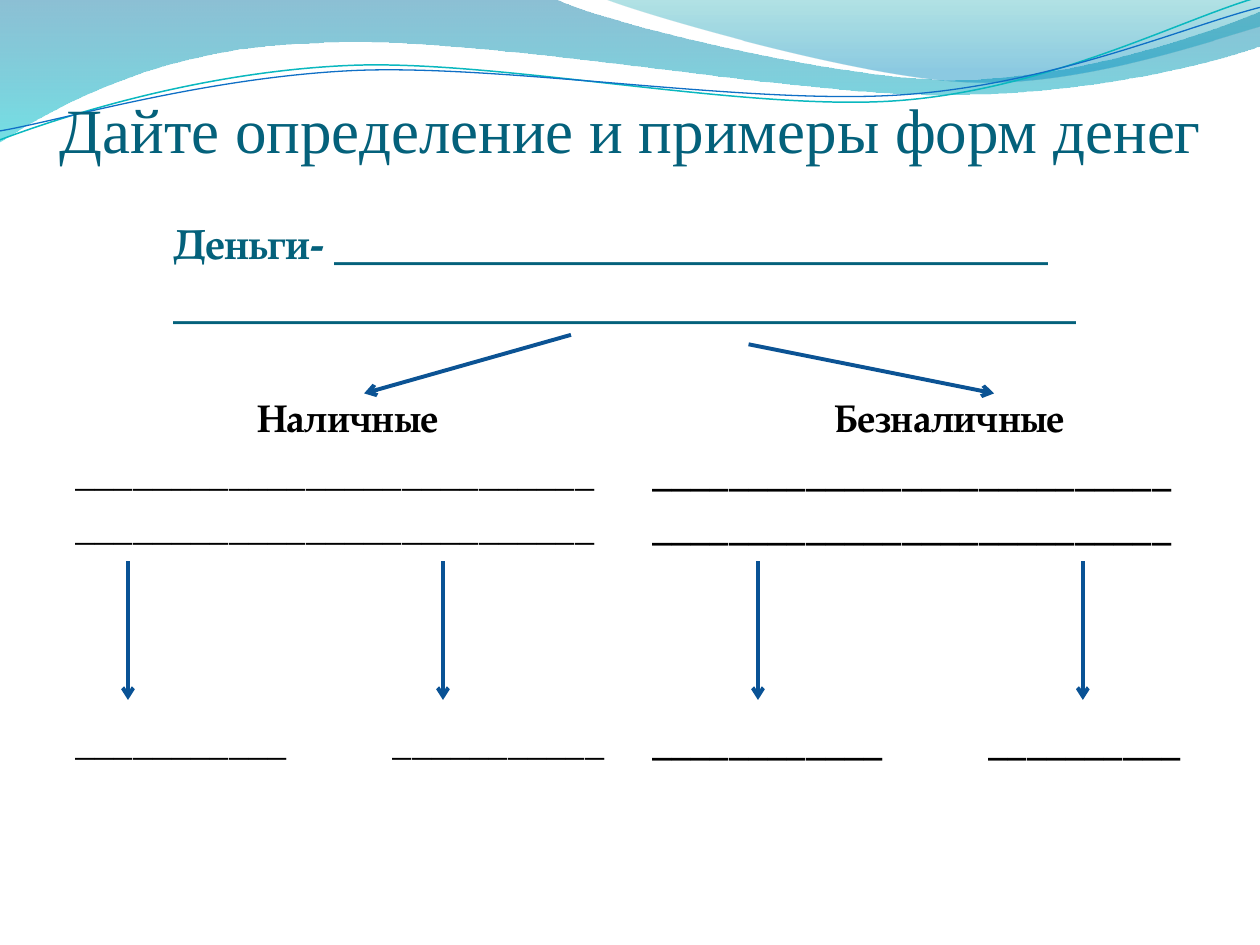
from lxml import etree
from pptx import Presentation
from pptx import util as u
from pptx.dml.color import RGBColor
from pptx.enum import shapes, text
from pptx.oxml.ns import qn

BLACK = RGBColor(0, 0, 0)
TEAL = RGBColor(0x04, 0x61, 0x7B)
BRANCH_BLUE = RGBColor(0x0B, 0x53, 0x94)
EXAMPLE_BLUE = RGBColor(0x09, 0x52, 0x95)
DEEP_BLUE = RGBColor(0, 0x74, 0xA1)
CYAN = RGBColor(0, 0xC6, 0xCF)
SEA_GREEN = RGBColor(0, 0xA1, 0xA9)
SKY_BLUE = RGBColor(0, 0x8B, 0xBF)
LINE_TEAL = RGBColor(0x0A, 0xB8, 0xBF)
LINE_BLUE = RGBColor(0x0F, 0x6F, 0xC6)
SERIF = "Times New Roman"
PAGELLA = "TeX Gyre Pagella"


def add_outline(page, left, top, start, segments, close):
    """Draw a freeform in centimetres; six numbers are a curve, two a line."""
    points = [start]
    for segment in segments:
        points.extend(zip(segment[::2], segment[1::2]))
    placed = [(u.Cm(left + x), u.Cm(top + y)) for x, y in points]
    builder = page.shapes.build_freeform(*placed[0])
    builder.add_line_segments(placed[1:], close=close)
    outline = builder.convert_to_shape()
    outline.shadow.inherit = False
    lines = iter(list(outline._element.iter(qn("a:lnTo"))))
    for segment in segments:
        first = next(lines)
        if len(segment) == 6:
            first.tag = qn("a:cubicBezTo")
            for _ in range(2):
                control = next(lines)
                first.append(control[0])
                control.getparent().remove(control)
    return outline


def add_wave(page, left, top, start, segments, stops):
    """Draw a filled wave; each stop is a position, a colour and an opacity."""
    wave = add_outline(page, left, top, start, segments, True)
    wave.line.fill.background()
    wave.fill.gradient()
    wave.fill.gradient_angle = 270
    for stop, (position, colour, _) in zip(wave.fill.gradient_stops, stops):
        stop.position = position
        stop.color.rgb = colour
    for tint, (_, _, opacity) in zip(wave._element.spPr.iter(qn("a:srgbClr")), stops):
        etree.SubElement(tint, qn("a:alpha")).set("val", str(opacity * 1000))


def add_ripple(page, left, top, start, segments, colour, width):
    """Draw a thin open curve."""
    ripple = add_outline(page, left, top, start, segments, False)
    ripple.fill.background()
    ripple.line.color.rgb = colour
    ripple.line.width = u.Pt(width)


def add_header_waves(page, left, top):
    """Draw the decoration along the top of the page."""
    add_wave(page, left, top, (0, 0), [
        (11.18, -0.03), (12.09, 0.43, 16.87, 1.6, 19.25, 1.6),
        (21.67, 1.6, 24.33, 0.66, 25.4, 0.23), (25.43, 0.91),
        (24.97, 1.12, 22.1, 1.93, 18.95, 1.91), (15.8, 1.91, 9.7, 0.71, 6.53, 0.86),
        (3.28, 0.91, 1.17, 2.11, -0.03, 2.87)], [(0, DEEP_BLUE, 45), (1, CYAN, 55)])
    add_wave(page, left, top, (12.17, -0.03), [
        (12.93, 0.28, 17.32, 1.57, 19.53, 1.65),
        (21.74, 1.75, 24.41, 0.81, 25.4, 0.53), (25.4, 0)],
        [(0, SEA_GREEN, 30), (0.8, SKY_BLUE, 45)])
    add_ripple(page, left, top, (0, 2.82), [
        (1.22, 2.36, 4.01, 1.45, 7.04, 1.32),
        (10.03, 1.19, 15.06, 2.26, 18.11, 2.03),
        (21.16, 1.8, 23.83, 0.38, 25.35, -0.05)], LINE_TEAL, 0.85)
    add_ripple(page, left, top, (0, 2.64), [
        (1.19, 2.44, 4.17, 1.55, 7.19, 1.42),
        (10.24, 1.3, 15.16, 2.13, 18.21, 1.91),
        (21.23, 1.7, 23.9, 0.53, 25.4, 0.15)], LINE_BLUE, 0.75)


def add_frame(page, left, top, width, height, side=0.0, upper=0.0, anchor="TOP"):
    """Add an empty wrapping text box and return its text frame."""
    frame = page.shapes.add_textbox(*map(u.Cm, (left, top, width, height))).text_frame
    frame.word_wrap = True
    frame.margin_left = frame.margin_right = u.Cm(side)
    frame.margin_top, frame.margin_bottom = u.Cm(upper), 0
    frame.vertical_anchor = text.MSO_ANCHOR[anchor]
    return frame


def write(frame, words, size=22, font=PAGELLA, colour=BLACK, bold=True,
          before=0.0, indent=0.0, tab=None):
    """Write one paragraph into the frame."""
    first = frame.paragraphs[0]
    para = frame.add_paragraph() if first.runs else first
    para.space_before = u.Pt(before)
    properties = para._p.get_or_add_pPr()
    properties.set("marL", str(u.Cm(indent)))
    if tab:
        stops = etree.SubElement(properties, qn("a:tabLst"))
        etree.SubElement(stops, qn("a:tab"), pos=str(u.Cm(tab)), algn="l")
    span = para.add_run()
    span.text = words
    span.font.size, span.font.name, span.font.bold = u.Pt(size), font, bold
    span.font.color.rgb = colour


def add_arrow(page, x1, y1, x2, y2, colour):
    """Draw an arrow between two points in centimetres."""
    arrow = page.shapes.add_connector(
        shapes.MSO_CONNECTOR.STRAIGHT, *map(u.Cm, (x1, y1, x2, y2)))
    arrow.line.color.rgb = colour
    arrow.line.width = u.Pt(2.25)
    etree.SubElement(arrow.line._get_or_add_ln(), qn("a:tailEnd"), type="arrow")
    etree.SubElement(arrow._element.spPr, qn("a:effectLst"))


def add_title(page, left, top, width, height):
    """Write the task at the head of the page."""
    frame = add_frame(page, left, top, width, height, upper=0.13, anchor="BOTTOM")
    write(frame, "Дайте определение и примеры форм денег",
          size=36, font=SERIF, colour=TEAL, bold=False)


def add_definition(page, left, top, width, height):
    """Write the term with its blanks and the two arrows below it."""
    frame = add_frame(page, left, top, width, height, side=0.13, anchor="MIDDLE")
    for words in ("Деньги- " + "_" * 34, "_" * 43):
        write(frame, words, size=24, colour=TEAL, before=4.8)
    add_arrow(page, left + 8.14, top + 2.18, left + 3.97, top + 3.36, BRANCH_BLUE)
    add_arrow(page, left + 11.72, top + 2.37, left + 16.67, top + 3.36, BRANCH_BLUE)


def add_form(page, left, top, width, height, name, blanks, tab, bold, arrows):
    """Write one form of money with its blanks and the arrows to its examples."""
    frame = add_frame(page, left, top, width, height, side=0.25)
    write(frame, name, before=4.4, indent=3.67)
    for _ in range(2):
        write(frame, "_" * 27, bold=bold, before=4.4)
    write(frame, "\t".join("_" * count for count in blanks),
          bold=bold, before=96.5, tab=tab)
    for offset in arrows:
        add_arrow(page, left + offset, top + 3.37, left + offset, top + 6.17,
                  EXAMPLE_BLUE)


def main():
    """Build the deck and save it."""
    deck = Presentation()
    deck.slide_width, deck.slide_height = u.Cm(25.4), u.Cm(19.05)
    page = deck.slides.add_slide(deck.slide_layouts[6])
    add_header_waves(page, 0, 0)
    add_title(page, 1.2, 1.79, 23.55, 1.55)
    add_definition(page, 3.37, 4.57, 18.77, 1.83)
    add_form(page, 1.27, 7.94, 11.23, 9.73, "Наличные", (11, 11), 6.4, False,
             (1.31, 7.66))
    add_form(page, 12.9, 7.94, 11.23, 9.53, "Безналичные", (12, 10), 6.78, True,
             (2.38, 8.93))
    deck.save("out.pptx")


if __name__ == "__main__":
    main()
